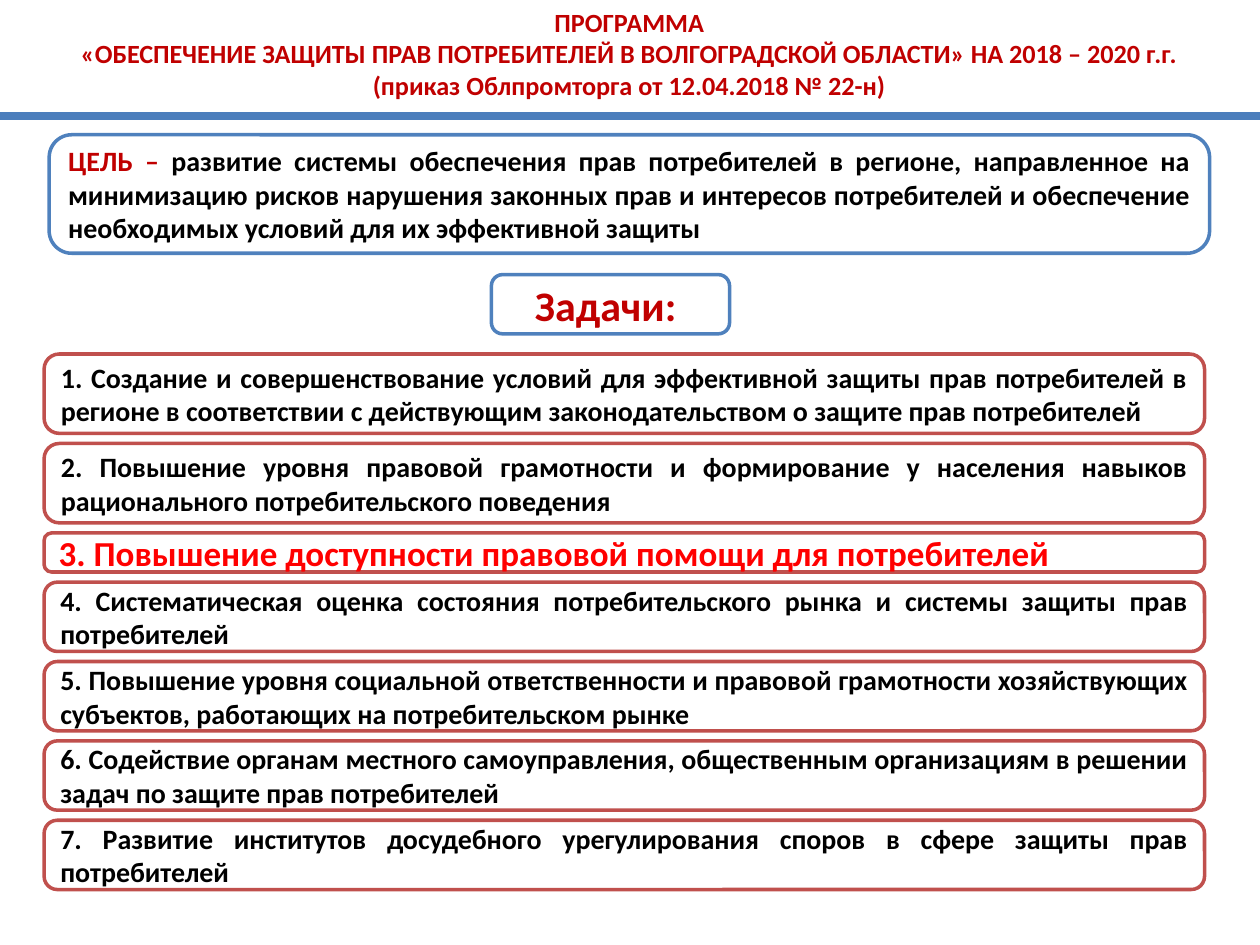
from dataclasses import dataclass

from lxml.etree import SubElement
from pptx import Presentation
from pptx.dml.color import RGBColor
from pptx.enum.shapes import MSO_CONNECTOR, MSO_SHAPE
from pptx.enum.text import MSO_ANCHOR, PP_ALIGN
from pptx.oxml.ns import qn
from pptx.util import Inches, Pt


@dataclass(frozen=True)
class Theme:
    font: str = "Calibri"
    white: str = "FFFFFF"
    black: str = "000000"
    crimson: str = "C00000"
    red: str = "FF0000"
    blue: str = "4F81BD"
    rule: str = "4B7EBC"
    brick: str = "C0504D"
    title_size: float = 15
    body_size: float = 16
    accent_size: float = 20
    heading_size: float = 24
    border: float = 2
    rule_width: float = 4.5
    corner: float = 0.19


THEME = Theme()

TITLE_LINES = [
    "ПРОГРАММА",
    "«ОБЕСПЕЧЕНИЕ ЗАЩИТЫ ПРАВ ПОТРЕБИТЕЛЕЙ В ВОЛГОГРАДСКОЙ ОБЛАСТИ» НА 2018 – 2020 г.г. "
    "(приказ Облпромторга от 12.04.2018 № 22-н)",
]
GOAL = (
    "развитие системы обеспечения прав потребителей в регионе, направленное на "
    "минимизацию рисков нарушения законных прав и интересов потребителей и "
    "обеспечение необходимых условий для их эффективной защиты"
)
TASKS = [
    ("Создание и совершенствование условий для эффективной защиты прав потребителей "
     "в регионе в соответствии с действующим законодательством о защите прав потребителей", 0.63),
    ("Повышение уровня правовой грамотности и формирование у населения навыков "
     "рационального потребительского поведения", 0.63),
    ("Повышение доступности правовой помощи для потребителей", 0.31),
    ("Систематическая оценка состояния потребительского рынка и системы защиты прав "
     "потребителей", 0.55),
    ("Повышение уровня социальной ответственности и правовой грамотности "
     "хозяйствующих субъектов, работающих на потребительском рынке", 0.55),
    ("Содействие органам местного самоуправления, общественным организациям в "
     "решении задач по защите прав потребителей", 0.55),
    ("Развитие институтов досудебного урегулирования споров в сфере защиты прав "
     "потребителей", 0.55),
]
ACCENT_TASK = 3
TASK_GAP = 0.08


def add_words(paragraph, words, size, color):
    run = paragraph.add_run()
    run.text = words
    style = {"name": THEME.font, "size": Pt(size), "bold": True}
    for attribute, value in style.items():
        setattr(run.font, attribute, value)
    run.font.color.rgb = RGBColor.from_string(color)


def add_title(slide, left, top, width, height):
    title = slide.shapes.add_textbox(*map(Inches, (left, top, width, height)))
    title.text_frame.word_wrap = True
    paragraph = title.text_frame.paragraphs[0]
    paragraph.alignment = PP_ALIGN.CENTER
    for index, line in enumerate(TITLE_LINES):
        if index:
            paragraph.add_line_break()
        add_words(paragraph, line, THEME.title_size, THEME.crimson)


def add_rule(slide, left, top, width):
    ends = map(Inches, (left, top, left + width, top))
    rule = slide.shapes.add_connector(MSO_CONNECTOR.STRAIGHT, *ends)
    rule.line.color.rgb = RGBColor.from_string(THEME.rule)
    rule.line.width = Pt(THEME.rule_width)
    SubElement(rule._element.spPr, qn("a:effectLst"))


def add_panel(slide, box, border, alignment, pieces):
    panel = slide.shapes.add_shape(MSO_SHAPE.ROUNDED_RECTANGLE, *map(Inches, box))
    panel.shadow.inherit = False
    panel.adjustments[0] = THEME.corner
    panel.fill.solid()
    panel.fill.fore_color.rgb = RGBColor.from_string(THEME.white)
    panel.line.color.rgb = RGBColor.from_string(border)
    panel.line.width = Pt(THEME.border)
    frame = panel.text_frame
    frame.word_wrap = True
    frame.vertical_anchor = MSO_ANCHOR.MIDDLE
    paragraph = frame.paragraphs[0]
    paragraph.alignment = alignment
    for words, size, color in pieces:
        add_words(paragraph, words, size, color)


def add_goal(slide, *box):
    pieces = [("ЦЕЛЬ – ", THEME.body_size, THEME.crimson),
              (GOAL, THEME.body_size, THEME.black)]
    add_panel(slide, box, THEME.blue, PP_ALIGN.JUSTIFY, pieces)


def add_heading(slide, *box):
    pieces = [("Задачи: ", THEME.heading_size, THEME.crimson)]
    add_panel(slide, box, THEME.blue, PP_ALIGN.CENTER, pieces)


def add_tasks(slide, left, top, width):
    for number, (task, height) in enumerate(TASKS, start=1):
        size, color = THEME.body_size, THEME.black
        if number == ACCENT_TASK:
            size, color = THEME.accent_size, THEME.red
        add_panel(slide, (left, top, width, height), THEME.brick,
                  PP_ALIGN.JUSTIFY, [(f"{number}. {task}", size, color)])
        top += height + TASK_GAP


def main():
    deck = Presentation()
    deck.slide_width, deck.slide_height = Inches(10), Inches(7.5)
    slide = deck.slides.add_slide(deck.slide_layouts[6])
    add_title(slide, 0.43, 0, 9.13, 0.88)
    add_rule(slide, 0, 0.92, 10)
    add_goal(slide, 0.39, 1.07, 9.21, 0.94)
    add_tasks(slide, 0.35, 2.81, 9.21)
    add_heading(slide, 3.9, 2.18, 1.89, 0.47)
    deck.save("out.pptx")


if __name__ == "__main__":
    main()
